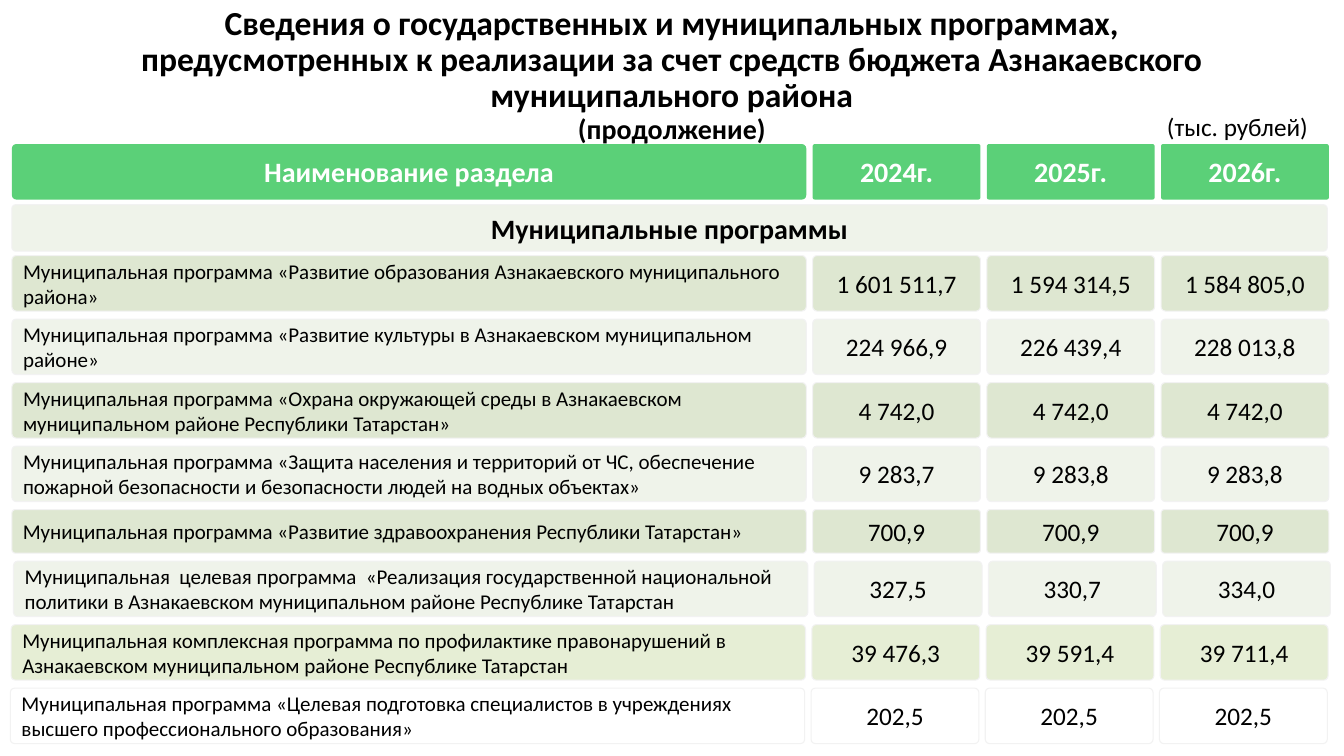
import dataclasses

import pptx
import pptx.dml.color
import pptx.enum.shapes
import pptx.enum.text
import pptx.oxml
import pptx.oxml.ns
import pptx.util

Cm = pptx.util.Cm
Pt = pptx.util.Pt
ALIGN = pptx.enum.text.PP_ALIGN
ANCHOR = pptx.enum.text.MSO_ANCHOR


@dataclasses.dataclass(frozen=True)
class Theme:
    font: str = "Calibri"
    black: str = "000000"
    white: str = "FFFFFF"
    green: str = "5BD078"
    sage: str = "DEE7D1"
    pale: str = "EFF3EA"
    lime: str = "E3ECD0"
    edge: str = "F2F2F2"
    title: int = 24
    head: int = 20
    value: int = 18
    name: int = 15


THEME = Theme()

LEFT = 0.3
WIDE = 20.02
FIRST = 20.48
STEP = 4.39
SLIM = 4.23
GAP = 0.2
HIGH = 1.4
LOW = 1.1
START = 6.44

YEARS = ["2024г.", "2025г.", "2026г."]

ROWS = [
    ("Муниципальная программа «Развитие образования Азнакаевского муниципального района»",
     ["1 601 511,7", "1 594 314,5", "1 584 805,0"], THEME.sage, HIGH, 0),
    ("Муниципальная программа «Развитие культуры в Азнакаевском муниципальном районе»",
     ["224 966,9", "226 439,4", "228 013,8"], THEME.pale, HIGH, 0),
    ("Муниципальная программа «Охрана окружающей среды в Азнакаевском муниципальном районе "
     "Республики Татарстан»",
     ["4 742,0", "4 742,0", "4 742,0"], THEME.sage, HIGH, 0),
    ("Муниципальная программа «Защита населения и территорий от ЧС, обеспечение пожарной "
     "безопасности и безопасности людей на водных объектах»",
     ["9 283,7", "9 283,8", "9 283,8"], THEME.pale, HIGH, 0),
    ("Муниципальная программа «Развитие здравоохранения Республики Татарстан»",
     ["700,9", "700,9", "700,9"], THEME.sage, LOW, 0),
    ("Муниципальная  целевая программа  «Реализация государственной национальной политики "
     "в Азнакаевском муниципальном районе Республике Татарстан",
     ["327,5", "330,7", "334,0"], THEME.pale, HIGH, 0.04),
    ("Муниципальная комплексная программа по профилактике правонарушений в Азнакаевском "
     "муниципальном районе Республике Татарстан",
     ["39 476,3", "39 591,4", "39 711,4"], THEME.lime, HIGH, -0.02),
    ("Муниципальная программа «Целевая подготовка специалистов в учреждениях высшего "
     "профессионального образования»",
     ["202,5", "202,5", "202,5"], None, HIGH, -0.04),
]


def paint(color, tone):
    color.rgb = pptx.dml.color.RGBColor.from_string(tone)


def style(para, size, tone=THEME.black, bold=False, align=ALIGN.CENTER):
    para.alignment = align
    for run in para.runs:
        run.font.name = THEME.font
        run.font.size = Pt(size)
        run.font.bold = bold
        paint(run.font.color, tone)


def fade(shape, share):
    tone = shape.fill._xPr.find(".//" + pptx.oxml.ns.qn("a:srgbClr"))
    alpha = pptx.oxml.parse_xml(
        f'<a:alpha {pptx.oxml.ns.nsdecls("a")} val="{share * 1000}"/>')
    tone.append(alpha)


def add_cell(slide, box, text, fill, size, edge=THEME.edge, curve=0.08, **look):
    shape = slide.shapes.add_shape(
        pptx.enum.shapes.MSO_SHAPE.ROUNDED_RECTANGLE, *map(Cm, box))
    shape.shadow.inherit = False
    shape.adjustments[0] = curve
    if fill:
        shape.fill.solid()
        paint(shape.fill.fore_color, fill)
    else:
        shape.fill.background()
    if edge:
        paint(shape.line.color, edge)
        shape.line.width = Pt(0.75)
    else:
        shape.line.fill.background()
    frame = shape.text_frame
    frame.word_wrap = True
    frame.vertical_anchor = ANCHOR.MIDDLE
    frame.text = text
    style(frame.paragraphs[0], size, **look)
    return shape


def add_title(slide):
    frame = slide.shapes.add_textbox(Cm(3.23), Cm(0.03), Cm(27.4), Cm(3.78)).text_frame
    frame.word_wrap = True
    frame.text = ("Сведения о государственных и муниципальных программах, предусмотренных "
                  "к реализации за счет средств бюджета Азнакаевского муниципального района")
    frame.add_paragraph().text = "(продолжение)"
    for para, size in zip(frame.paragraphs, (THEME.title, THEME.head)):
        style(para, size, bold=True)
        para.line_spacing = 0.9


def add_unit(slide):
    frame = slide.shapes.add_textbox(Cm(29.13), Cm(2.69), Cm(4.11), Cm(1.02)).text_frame
    frame.word_wrap = False
    frame.text = "(тыс. рублей)"
    style(frame.paragraphs[0], THEME.value)


def add_head(slide):
    look = dict(fill=THEME.green, size=THEME.head, edge=None, tone=THEME.white, bold=True)
    top = 3.63
    add_cell(slide, (LEFT, top, WIDE, HIGH), "Наименование раздела", **look)
    for col, year in enumerate(YEARS):
        add_cell(slide, (FIRST + col * STEP, top, SLIM, HIGH), year, curve=0.04, **look)
    band = add_cell(slide, (LEFT, 5.16, 33.15, 1.17), "Муниципальные программы",
                    THEME.pale, THEME.head, bold=True)
    band.text_frame.vertical_anchor = ANCHOR.BOTTOM


def add_row(slide, top, name, values, fill, high, shift):
    cells = [add_cell(slide, (LEFT + shift, top, WIDE, high), name, fill,
                      THEME.name, align=ALIGN.LEFT)]
    for col, value in enumerate(values):
        box = (FIRST + shift + col * STEP, top, SLIM, high)
        cells.append(add_cell(slide, box, value, fill, THEME.value))
    if fill == THEME.lime:
        for cell in cells:
            fade(cell, 89)


def main():
    deck = pptx.Presentation()
    deck.slide_width = Cm(33.87)
    deck.slide_height = Cm(19.05)
    slide = deck.slides.add_slide(deck.slide_layouts[6])
    add_title(slide)
    add_unit(slide)
    add_head(slide)
    top = START
    for name, values, fill, high, shift in ROWS:
        add_row(slide, top, name, values, fill, high, shift)
        top += high + GAP
    deck.save("out.pptx")


if __name__ == "__main__":
    main()
